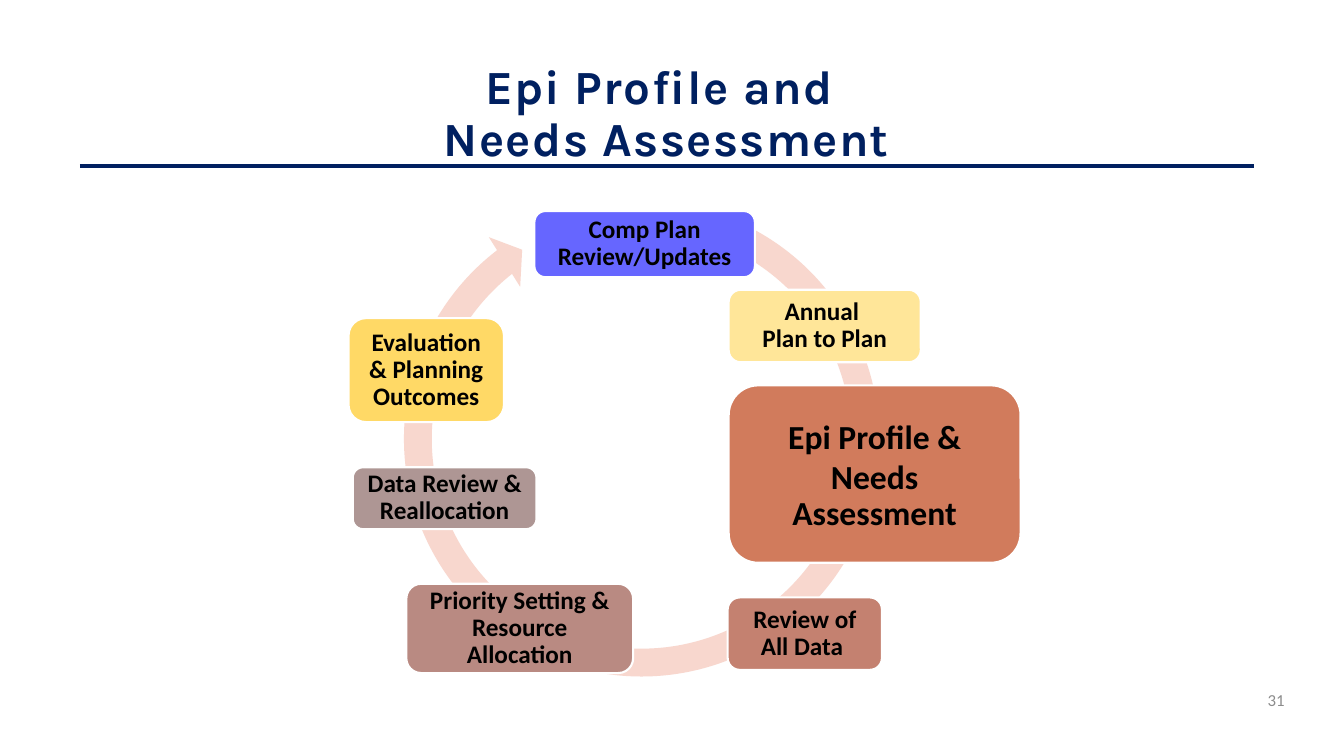
from collections import namedtuple
from dataclasses import dataclass

from lxml import etree
from pptx import Presentation
from pptx import util as u
from pptx.dml.color import RGBColor
from pptx.enum import shapes, text
from pptx.oxml.ns import qn

PX = 9525
Box = namedtuple("Box", "left top width height")


@dataclass(frozen=True)
class Theme:
    navy: str = "002060"
    black: str = "000000"
    white: str = "FFFFFF"
    grey: str = "8C8C8C"
    ring: str = "F8D7CE"
    heading_font: str = "Karla"
    body_font: str = "Calibri"
    title_size: int = 34
    focus_size: int = 24
    step_size: int = 18
    number_size: int = 12
    rule_width: float = 2.5
    outline_width: float = 1.5


THEME = Theme()

STEPS = [
    (Box(177, 24, 210, 63), "6666FF", ["Comp Plan Review/Updates"]),
    (Box(362, 99, 183, 69), "FFE699", ["Annual ", "Plan to Plan"]),
    (Box(362, 190, 278, 169), "D17B5C", ["Epi Profile & Needs", "Assessment"]),
    (Box(361, 392, 147, 69), "C48170", ["Review of All Data "]),
    (Box(55, 379, 216, 85), "B98A82", ["Priority Setting & Resource Allocation"]),
    (Box(4, 268, 175, 59), "AE9694", ["Data Review & Reallocation"]),
    (Box(0, 126, 148, 99), "FFD966", ["Evaluation & Planning Outcomes"]),
]
FOCUS_STEP = 2
RING = Box(38, 0, 482, 482)
RING_ADJUSTMENTS = (0.055, 3.31, 139.34, 172.9, 0.058)


def emu(box):
    return [length * PX for length in box]


def inside(region, part):
    return Box(region.left + part.left, region.top + part.top, part.width, part.height)


def write(frame, paragraphs, *, size, color=THEME.black, font=THEME.body_font, bold=True,
          align=text.PP_ALIGN.CENTER, spacings=(0.9, 0.9), inset=None):
    frame.word_wrap = True
    frame.auto_size = text.MSO_AUTO_SIZE.NONE
    frame.vertical_anchor = text.MSO_ANCHOR.MIDDLE
    if inset is not None:
        frame.margin_left = frame.margin_right = inset * PX
        frame.margin_top = frame.margin_bottom = inset * PX
    frame.text = "\n".join(paragraphs)
    for paragraph, spacing in zip(frame.paragraphs, spacings):
        paragraph.alignment = align
        paragraph.line_spacing = spacing
        paragraph.space_before = u.Pt(0)
        for run in paragraph.runs:
            run.font.name = font
            run.font.size = u.Pt(size)
            run.font.bold = bold
            run.font.color.rgb = RGBColor.from_string(color)


def add_filled(slide, kind, box, fill):
    shape = slide.shapes.add_shape(kind, *emu(box))
    shape.shadow.inherit = False
    shape.fill.solid()
    shape.fill.fore_color.rgb = RGBColor.from_string(fill)
    return shape


def add_heading(slide, region):
    title = slide.shapes.title
    title.left, title.top, title.width, title.height = emu(region)
    write(title.text_frame, ["Epi Profile and \vNeeds Assessment"], size=THEME.title_size,
          color=THEME.navy, font=THEME.heading_font)
    for run in title.text_frame.paragraphs[0].runs:
        run.font._element.set("spc", "100")

    rule_y = region.top + 118
    rule = slide.shapes.add_connector(
        shapes.MSO_CONNECTOR.STRAIGHT,
        *emu((region.left, rule_y, region.left + region.width, rule_y)))
    rule.line.color.rgb = RGBColor.from_string(THEME.navy)
    rule.line.width = u.Pt(THEME.rule_width)
    etree.SubElement(rule._element.spPr, qn("a:effectLst"))


def add_cycle(slide, region):
    ring = add_filled(slide, shapes.MSO_SHAPE.CIRCULAR_ARROW, inside(region, RING), THEME.ring)
    ring.line.fill.background()
    for index, value in enumerate(RING_ADJUSTMENTS):
        ring.adjustments[index] = value

    for index, (part, fill, label) in enumerate(STEPS):
        step = add_filled(slide, shapes.MSO_SHAPE.ROUNDED_RECTANGLE, inside(region, part), fill)
        step.line.color.rgb = RGBColor.from_string(THEME.white)
        step.line.width = u.Pt(THEME.outline_width)
        if index == FOCUS_STEP:
            write(step.text_frame, label, size=THEME.focus_size, spacings=(1.0, 0.9), inset=10)
        else:
            write(step.text_frame, label, size=THEME.step_size, inset=7)


def add_page_number(slide, region):
    number = slide.shapes.add_textbox(*emu(region))
    write(number.text_frame, ["31"], size=THEME.number_size, color=THEME.grey, bold=False,
          align=text.PP_ALIGN.RIGHT, spacings=(1.0,))


def main():
    deck = Presentation()
    deck.slide_width, deck.slide_height = 1280 * PX, 720 * PX
    slide = deck.slides.add_slide(deck.slide_layouts[5])
    add_heading(slide, Box(76, 40, 1118, 139))
    add_cycle(slide, Box(332, 177, 640, 482))
    add_page_number(slide, Box(1017, 647, 216, 38))
    deck.save("out.pptx")


if __name__ == "__main__":
    main()
